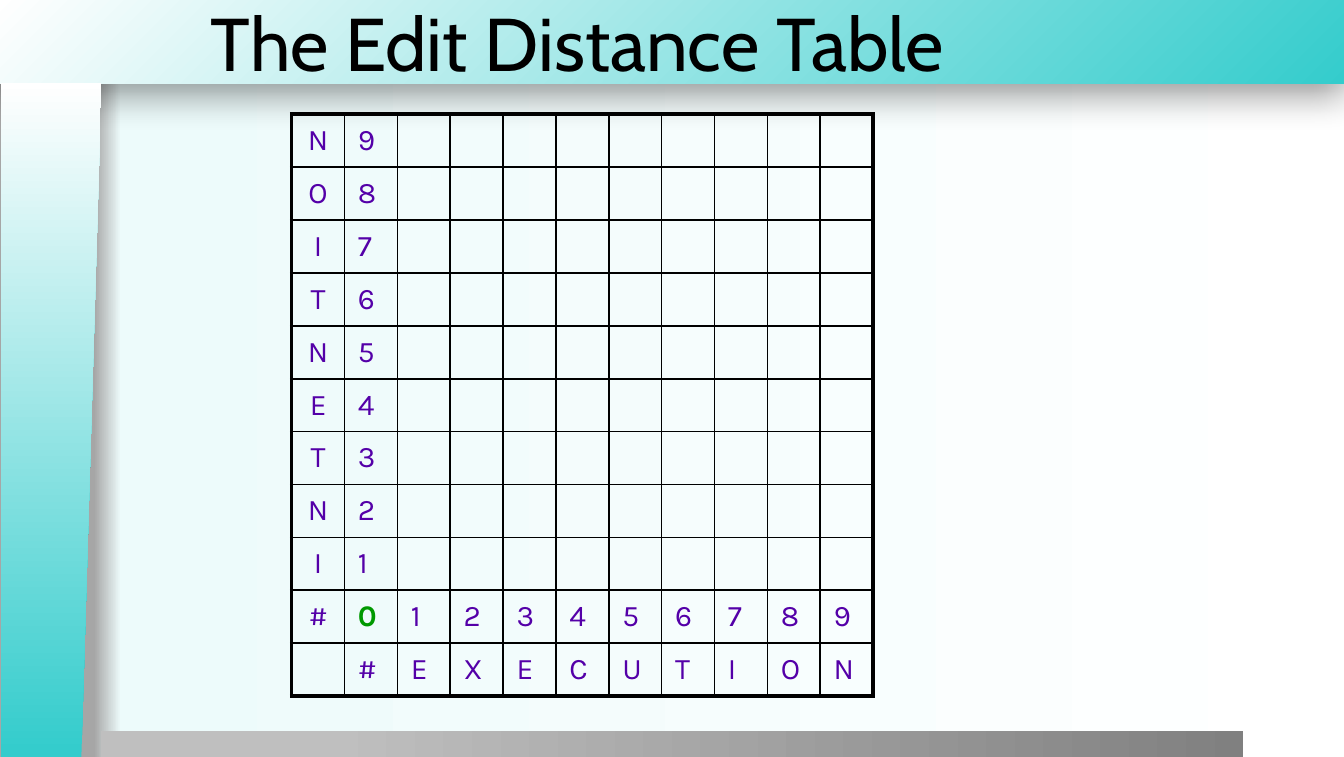
"""Build the edit distance table slide."""
from lxml import etree
from pptx import Presentation
from pptx import util as u
from pptx.dml.color import RGBColor
from pptx.enum import shapes, text
from pptx.oxml import parse_xml
from pptx.oxml.ns import nsdecls, qn

Inches, Pt = u.Inches, u.Pt
COLORS = {"teal": "34CCCC", "white": "FFFFFF", "mist": "EDFBFB", "edge": "A6A6A6",
          "silver": "BFBFBF", "gray": "808080", "black": "000000",
          "purple": "5400A8", "green": "009900"}


def set_gradient(fill, root, stops):
    fill.gradient()
    fill.gradient_angle = 0
    gradient = root.find(".//" + qn("a:gradFill"))
    stop_list = gradient.find(qn("a:gsLst"))
    for stop in list(stop_list):
        stop_list.remove(stop)
    for position, color in stops:
        stop = etree.SubElement(stop_list, qn("a:gs"), pos=str(position * 1000))
        etree.SubElement(stop, qn("a:srgbClr"), val=COLORS[color])
    return gradient


def add_panel(preset, box, stops):
    panel = slide.shapes.add_shape(preset, *map(Inches, box))
    panel.shadow.inherit = False
    panel.line.fill.background()
    return panel, set_gradient(panel.fill, panel._element.spPr, stops)


prs = Presentation()
prs.slide_width, prs.slide_height = Inches(10), Inches(5.63)
slide = prs.slides.add_slide(prs.slide_layouts[6])
set_gradient(slide.background.fill, slide._element, [(7, "edge"), (9, "mist"), (100, "white")])

header, header_gradient = add_panel(shapes.MSO_SHAPE.RECTANGLE, (-0.01, 0, 10.01, 0.62),
                                    [(0, "teal"), (100, "white")])
header_gradient.replace(header_gradient.find(qn("a:lin")), parse_xml(
    f'<a:path {nsdecls("a")} path="circle"><a:fillToRect l="100000" t="100000"/></a:path>'))
header_effects = header._element.spPr.find(qn("a:effectLst"))
header_effects.append(parse_xml(
    f'<a:outerShdw {nsdecls("a")} blurRad="{Pt(20)}" dist="{Pt(6)}" dir="5400000" '
    f'algn="t" rotWithShape="0"><a:srgbClr val="{COLORS["black"]}">'
    '<a:alpha val="40000"/></a:srgbClr></a:outerShdw>'))

add_panel(shapes.MSO_SHAPE.RECTANGLE, (0.75, 5.44, 8.5, 0.2), [(20, "silver"), (100, "gray")])
sidebar, _ = add_panel(shapes.MSO_SHAPE.FLOWCHART_MANUAL_INPUT, (-2.13, 2.75, 5.02, 0.75),
                       [(1, "teal"), (100, "white")])
sidebar.rotation = 270
sidebar._element.spPr.find(qn("a:xfrm")).set("flipV", "1")

source, target = "INTENTION", "EXECUTION"
grid = [[letter, str(len(source) - i)] + [""] * len(target)
        for i, letter in enumerate(reversed(source))]
grid.append(["#"] + [str(n) for n in range(len(target) + 1)])
grid.append(["", "#", *target])
size = len(grid)
last = size - 1

distances = slide.shapes.add_table(size, size, Inches(2.17), Inches(0.85),
                                   Inches(4.33), Inches(4.33)).table
distances.first_row = distances.horz_banding = False
for r, row in enumerate(grid):
    for c, value in enumerate(row):
        cell = distances.cell(r, c)
        cell.text = value
        cell.vertical_anchor = text.MSO_ANCHOR.MIDDLE
        cell.fill.background()
        if not value:
            cell.margin_top = cell.margin_bottom = 0
        origin = value == "0"
        entry = cell.text_frame.paragraphs[0]
        entry.font.name, entry.font.size, entry.font.bold = "Karla", Pt(16), origin
        entry.font.color.rgb = RGBColor.from_string(COLORS["green" if origin else "purple"])
        if c == 0:
            entry.alignment = text.PP_ALIGN.CENTER
        outer = {"L": c == 0, "R": c == last, "T": r == 0, "B": r == last}
        for i, (side, thick) in enumerate(outer.items()):
            cell._tc.get_or_add_tcPr().insert(i, parse_xml(
                f'<a:ln{side} {nsdecls("a")} w="{Pt(2.25 if thick else 1)}"><a:solidFill>'
                f'<a:srgbClr val="{COLORS["black"]}"/></a:solidFill></a:ln{side}>'))

title = slide.shapes.add_textbox(Inches(1.47), 0, Inches(8.53), Inches(0.62)).text_frame
title.word_wrap = True
title.vertical_anchor = text.MSO_ANCHOR.MIDDLE
title.text = "The Edit Distance Table"
heading = title.paragraphs[0]
heading.font.name, heading.font.size = "Cabin", Pt(40)
heading.font.color.rgb = RGBColor.from_string(COLORS["black"])

prs.save("out.pptx")
